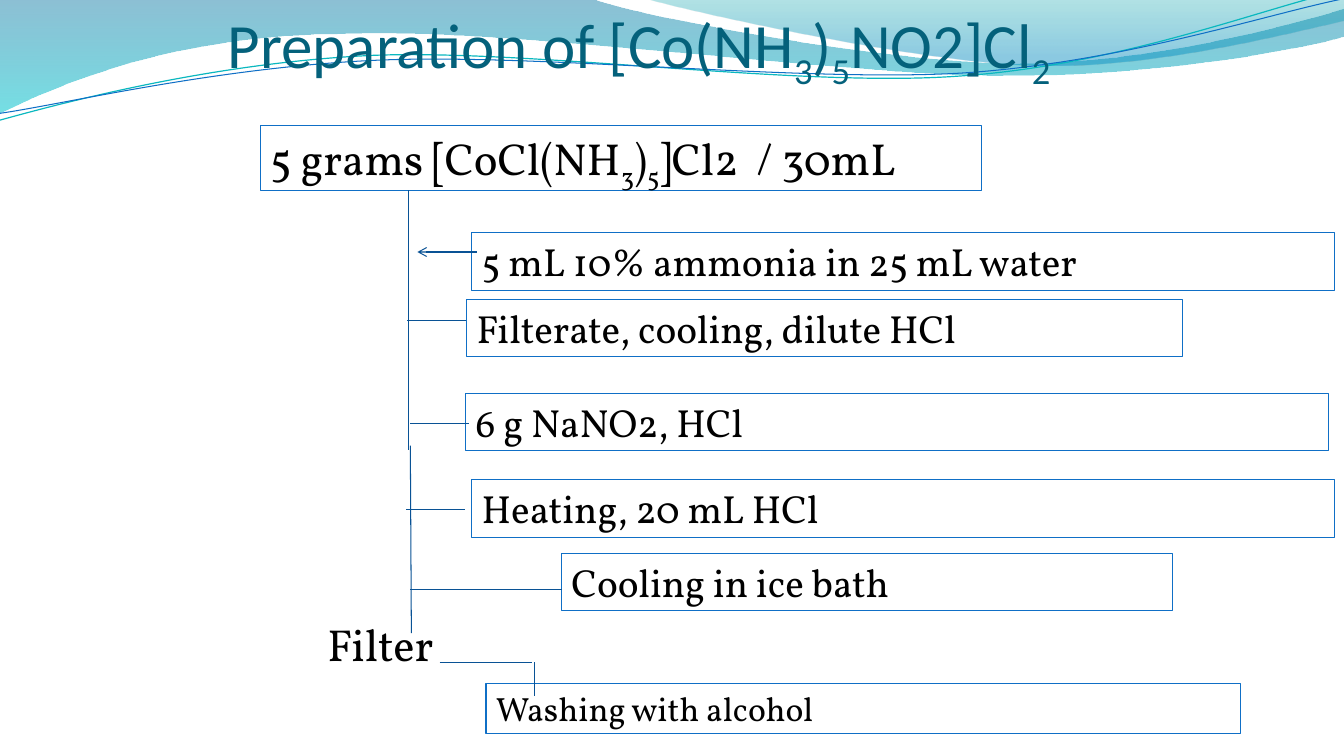
"""Builds a flow chart slide on the preparation of a cobalt nitro complex."""
from dataclasses import dataclass

from lxml.etree import SubElement
from pptx import Presentation
from pptx.dml.color import RGBColor
from pptx.enum.shapes import MSO_CONNECTOR, MSO_SHAPE
from pptx.enum.text import MSO_ANCHOR, MSO_AUTO_SIZE, PP_ALIGN
from pptx.oxml.ns import qn
from pptx.util import Inches, Pt


@dataclass(frozen=True)
class Theme:
    title_font: str = "Calibri"
    body_font: str = "Vollkorn"
    title_color: str = "04617B"
    text_color: str = "000000"
    box_line: str = "0F6FC6"
    connector_line: str = "095295"
    wave_line: str = "0AB8BF"
    left_wave: tuple = ((0, "0074A1", 45), (1, "00C6CF", 55))
    right_wave: tuple = ((0, "00A1A9", 30), (0.8, "008BBF", 45))
    title_size: float = 45
    large_size: float = 32
    step_size: float = 28
    small_size: float = 24
    thin: float = 0.75


theme = Theme()
presentation = Presentation()
presentation.slide_width = Inches(13.33)
presentation.slide_height = Inches(7.5)
slide = presentation.slides.add_slide(presentation.slide_layouts[6])


def add_text(text, left, top, width, height, size=theme.step_size, font=theme.body_font,
             color=theme.text_color, boxed=True, anchor=MSO_ANCHOR.TOP, margins=(0.1, 0.05, 0.1, 0.05)):
    """Adds text in which underscores enclose subscripts."""
    position = [Inches(length) for length in (left, top, width, height)]
    if boxed:
        shape = slide.shapes.add_shape(MSO_SHAPE.RECTANGLE, *position)
        shape.shadow.inherit = False
        shape.fill.background()
        shape.line.color.rgb = RGBColor.from_string(theme.box_line)
        shape.line.width = Pt(theme.thin)
    else:
        shape = slide.shapes.add_textbox(*position)
    frame = shape.text_frame
    frame.word_wrap = True
    frame.auto_size = MSO_AUTO_SIZE.SHAPE_TO_FIT_TEXT if boxed else MSO_AUTO_SIZE.NONE
    frame.vertical_anchor = anchor
    frame.margin_left, frame.margin_top, frame.margin_right, frame.margin_bottom = map(Inches, margins)
    paragraph = frame.paragraphs[0]
    paragraph.alignment = PP_ALIGN.LEFT
    for index, part in enumerate(text.split("_")):
        if part:
            run = paragraph.add_run()
            run.text = part
            run.font.size = Pt(size)
            run.font.name = font
            run.font.color.rgb = RGBColor.from_string(color)
            if index % 2:
                run.font._element.set("baseline", "-25000")


def add_wave(start, segments, closed):
    """Adds an outline of straight (x, y) and cubic (six-number) segments."""
    corners = [(Inches(x), Inches(y)) for segment in segments
               for x, y in zip(segment[::2], segment[1::2])]
    builder = slide.shapes.build_freeform(Inches(start[0]), Inches(start[1]))
    builder.add_line_segments(corners, close=closed)
    shape = builder.convert_to_shape()
    shape.shadow.inherit = False
    straight_lines = iter(list(shape._element.iter(qn("a:lnTo"))))
    for segment in segments:
        line = next(straight_lines)
        if len(segment) == 6:
            line.tag = qn("a:cubicBezTo")
            for _ in range(2):
                following = next(straight_lines)
                line.append(following[0])
                following.getparent().remove(following)
    return shape


bands = [
    ((0, -0.01), [(5.87, -0.01), (6.34, 0.17, 8.85, 0.63, 10.11, 0.63),
                  (11.38, 0.63, 12.78, 0.26, 13.33, 0.09), (13.35, 0.36),
                  (13.11, 0.44, 11.6, 0.76, 9.94, 0.75), (8.29, 0.75, 5.09, 0.28, 3.43, 0.34),
                  (1.72, 0.35, 0.61, 0.83, -0.01, 1.13)], theme.left_wave),
    ((6.39, -0.01), [(6.79, 0.11, 9.09, 0.62, 10.25, 0.65),
                     (11.41, 0.69, 12.82, 0.32, 13.33, 0.21), (13.33, 0)], theme.right_wave),
]
for start, segments, stops in bands:
    band = add_wave(start, segments, closed=True)
    band.line.fill.background()
    band.fill.gradient()
    band.fill.gradient_angle = 270
    for stop, (position, color, opacity) in zip(band.fill.gradient_stops, stops):
        stop.position = position
        stop.color.rgb = RGBColor.from_string(color)
        color_element = stop._gs.find(qn("a:srgbClr"))
        SubElement(color_element, qn("a:alpha"), val=str(opacity * 1000))

strands = [
    ((-0.03, 0.88), [(0.63, 0.73, 2.11, 0.41, 3.69, 0.41), (5.28, 0.42, 7.89, 0.93, 9.49, 0.89),
                     (11.09, 0.86, 12.54, 0.36, 13.33, 0.22)], theme.wave_line, 0.85),
    ((-0.02, 0.81), [(0.62, 0.75, 2.18, 0.45, 3.78, 0.46), (5.37, 0.47, 7.95, 0.88, 9.54, 0.86),
                     (11.14, 0.83, 12.57, 0.42, 13.36, 0.3)], theme.box_line, theme.thin),
]
for start, segments, color, width in strands:
    strand = add_wave(start, segments, closed=False)
    strand.rotation = 357.3
    strand.fill.background()
    strand.line.color.rgb = RGBColor.from_string(color)
    strand.line.width = Pt(width)

add_text("Preparation of [Co(NH_3_)_5_NO2]Cl_2_", 2.26, 0, 9, 0.91, size=theme.title_size,
         font=theme.title_font, color=theme.title_color, boxed=False,
         anchor=MSO_ANCHOR.BOTTOM, margins=(0, 0.05, 0, 0))
add_text("5 grams [CoCl(NH_3_)_5_]Cl2  / 30mL", 2.58, 1.25, 7.16, 0.64, size=theme.large_size)

steps = [
    ("5 mL 10% ammonia in 25 mL water", 4.68, 2.31, 8.56),
    ("Filterate, cooling, dilute HCl", 4.63, 2.97, 7.1),
    ("6 g NaNO2, HCl", 4.62, 3.9, 8.56),
    ("Heating, 20 mL HCl", 4.68, 4.76, 8.56),
    ("Cooling in ice bath", 5.57, 5.49, 6.06),
]
for text, left, top, width in steps:
    add_text(text, left, top, width, 0.57)
add_text("Filter", 3.15, 6.07, 1.67, 0.67, size=theme.large_size, boxed=False)
add_text("Washing with alcohol", 4.82, 6.78, 7.48, 0.5, size=theme.small_size)

upper_stem = (4.05, 1.89, 4.05, 4.46)
lower_stem = (4.07, 4.42, 4.08, 6.28)
ammonia_arrow = (4.73, 2.5, 4.14, 2.5)
filtrate_branch = (4.04, 3.18, 4.62, 3.18)
nitrite_branch = (4.07, 4.2, 4.65, 4.2)
heating_branch = (4.03, 5.05, 4.61, 5.05)
cooling_branch = (4.07, 5.85, 5.57, 5.85)
filter_branch = (4.36, 6.57, 5.28, 6.57)
washing_drop = (5.3, 6.57, 5.3, 6.9)
for ends in (upper_stem, lower_stem, ammonia_arrow, filtrate_branch, nitrite_branch,
             heating_branch, cooling_branch, filter_branch, washing_drop):
    connector = slide.shapes.add_connector(MSO_CONNECTOR.STRAIGHT, *map(Inches, ends))
    connector.line.color.rgb = RGBColor.from_string(theme.connector_line)
    connector.line.width = Pt(theme.thin)
    if ends == ammonia_arrow:
        SubElement(connector.line._get_or_add_ln(), qn("a:tailEnd"), type="arrow")
    SubElement(connector._element.spPr, qn("a:effectLst"))

presentation.save("out.pptx")
